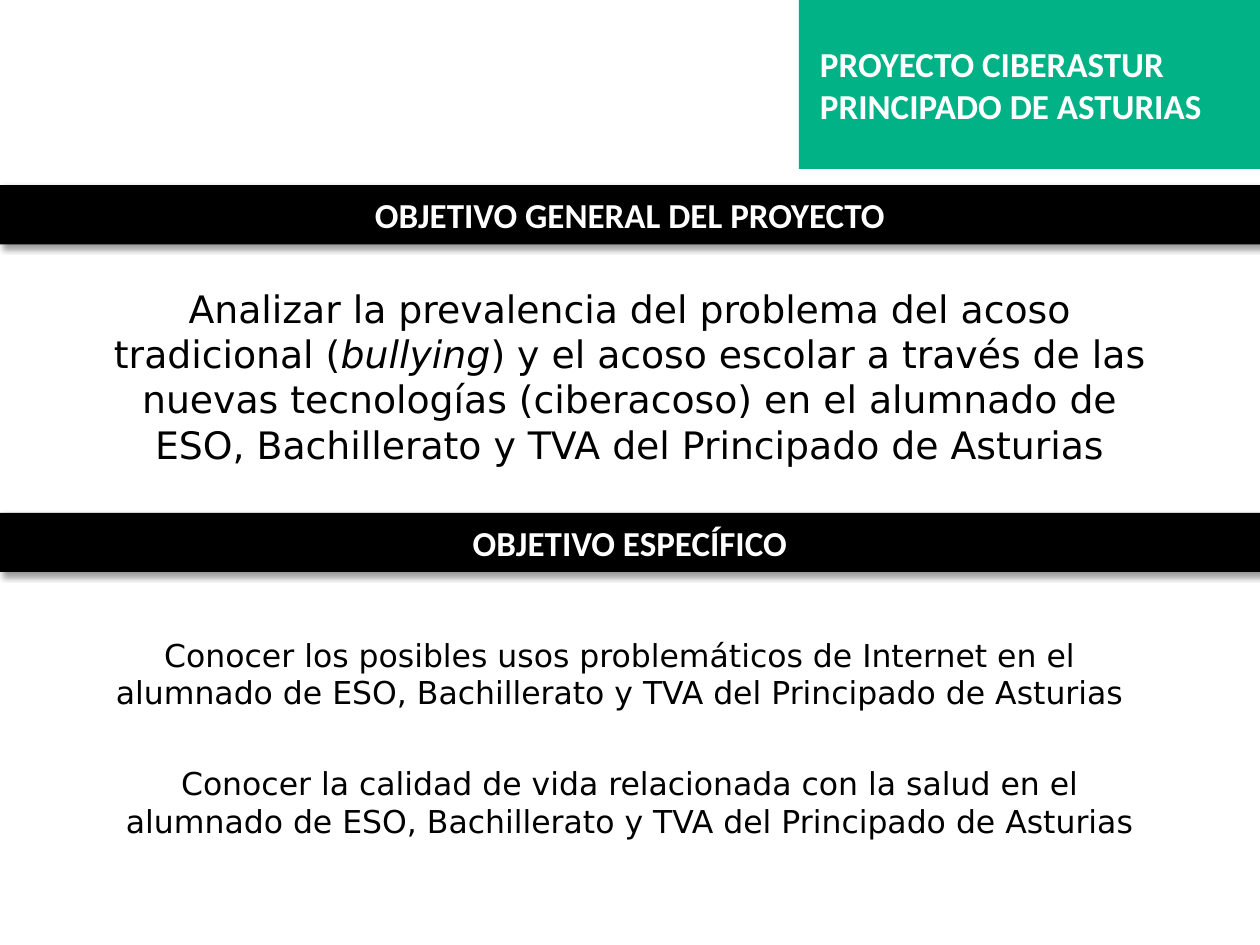
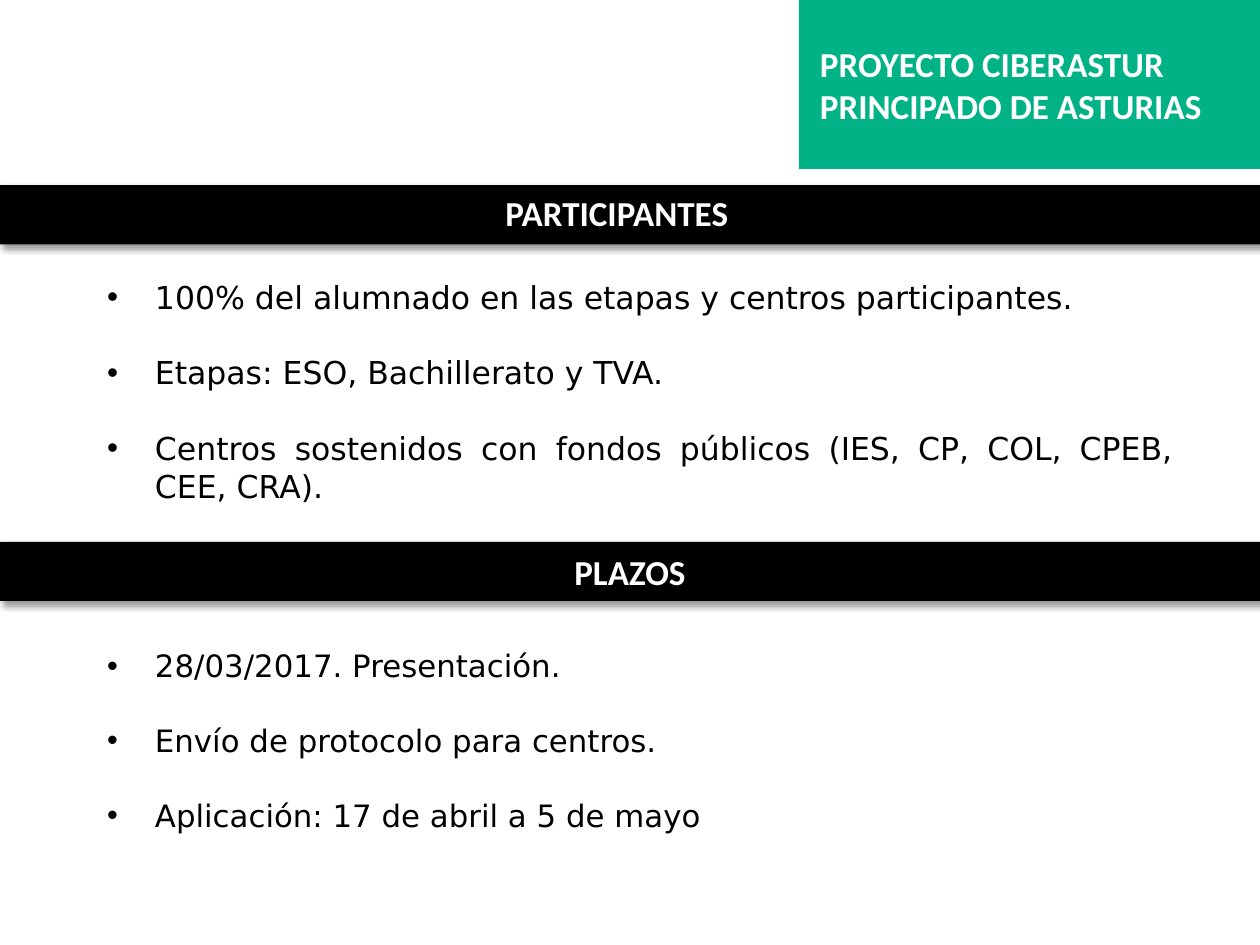
import dataclasses

import pptx
import pptx.dml.color
import pptx.enum.shapes
import pptx.enum.text
import pptx.oxml
import pptx.oxml.ns
import pptx.util

Inches, Pt = pptx.util.Inches, pptx.util.Pt
ALIGN = pptx.enum.text.PP_ALIGN
ANCHOR = pptx.enum.text.MSO_ANCHOR


@dataclasses.dataclass(frozen=True)
class Theme:
    green: str = "00B285"
    black: str = "000000"
    white: str = "FFFFFF"
    heading_font: str = "Calibri"
    body_font: str = "DejaVu Sans"
    heading_size: float = 20
    goal_size: float = 21.6
    body_size: float = 18
    dates_size: float = 17.6
    list_gap: float = 21.5
    list_indent: float = 0.38


THEME = Theme()
HEADING = {"name": THEME.heading_font, "size": Pt(THEME.heading_size), "bold": True}
BODY = {"name": THEME.body_font, "size": Pt(THEME.body_size), "bold": False}
GOAL = BODY | {"size": Pt(THEME.goal_size)}
DATES = BODY | {"size": Pt(THEME.dates_size)}

SHADOW = (
    '<a:outerShdw %s blurRad="50800" dist="38100" dir="2700000" algn="tl" rotWithShape="0">'
    '<a:srgbClr val="%s"><a:alpha val="40000"/></a:srgbClr></a:outerShdw>'
)


def rgb(value):
    return pptx.dml.color.RGBColor.from_string(value)


def place(shape, left, top, width, height):
    box = {"left": left, "top": top, "width": width, "height": height}
    for name, value in box.items():
        setattr(shape, name, Inches(value))


def add_bullet(paragraph):
    """Give the paragraph a hanging bullet."""
    properties = paragraph._p.get_or_add_pPr()
    indent = Inches(THEME.list_indent)
    properties.set("marL", str(indent))
    properties.set("indent", str(-indent))
    bullet = pptx.oxml.parse_xml('<a:buChar %s char="•"/>' % pptx.oxml.ns.nsdecls("a"))
    properties.append(bullet)


def write(shape, lines, font, color, align=ALIGN.CENTER, anchor=ANCHOR.MIDDLE,
          wrap=True, bullets=False):
    """Fill a shape with paragraphs; words between asterisks are italic."""
    frame = shape.text_frame
    layout = {"auto_size": pptx.enum.text.MSO_AUTO_SIZE.NONE,
              "word_wrap": wrap, "vertical_anchor": anchor}
    for name, value in layout.items():
        setattr(frame, name, value)
    for index, line in enumerate(lines):
        paragraph = frame.paragraphs[0] if index == 0 else frame.add_paragraph()
        paragraph.alignment = align
        paragraph.space_before = Pt(THEME.list_gap if bullets and index else 0)
        if bullets:
            add_bullet(paragraph)
        for part, words in enumerate(line.split("*")):
            run = paragraph.add_run()
            run.text = words
            for name, value in (font | {"italic": part % 2 == 1}).items():
                setattr(run.font, name, value)
            run.font.color.rgb = rgb(color)


def add_block(slide, box, color):
    block = slide.shapes.add_shape(
        pptx.enum.shapes.MSO_SHAPE.RECTANGLE, *map(Inches, box))
    block.shadow.inherit = False
    block.fill.solid()
    block.fill.fore_color.rgb = rgb(color)
    block.line.fill.background()
    return block


def add_band(slide, top, heading=None):
    """Full-width black band with a soft shadow and an optional heading."""
    band = add_block(slide, (0, top, 10, 0.47), THEME.black)
    effects = band.element.spPr.find(pptx.oxml.ns.qn("a:effectLst"))
    effects.append(pptx.oxml.parse_xml(
        SHADOW % (pptx.oxml.ns.nsdecls("a"), THEME.black)))
    if heading:
        write(band, [heading], HEADING, THEME.white)


def add_text(slide, box, *content, **options):
    write(slide.shapes.add_textbox(*map(Inches, box)), *content, **options)


def add_project_name(slide):
    add_text(slide, (6.41, 0.29, 3.46, 0.77),
             ["PROYECTO CIBERASTUR", "PRINCIPADO DE ASTURIAS"],
             HEADING, THEME.white, align=ALIGN.LEFT, anchor=ANCHOR.TOP)


def add_master_panel(deck, slide):
    """Draw the green corner panel and hand it over to the slide master."""
    panel = add_block(slide, (6.34, 0, 3.66, 1.34), THEME.green)
    panel.element.nvSpPr.cNvPr.set("id", "20")
    deck.slide_master.shapes.element.append(panel.element)


def build_objectives(slide):
    # General objective
    goal, first_aim = slide.placeholders
    place(goal, 0.75, 2.18, 8.5, 1.61)
    write(goal, ["Analizar la prevalencia del problema del acoso tradicional "
                 "(*bullying*) y el acoso escolar a través de las nuevas tecnologías "
                 "(ciberacoso) en el alumnado de ESO, Bachillerato y TVA del "
                 "Principado de Asturias"], GOAL, THEME.black)

    # Specific objectives
    students = "en el alumnado de ESO, Bachillerato y TVA del Principado de Asturias"
    place(first_aim, 0.67, 4.54, 8.5, 1.61)
    write(first_aim, [f"Conocer los posibles usos problemáticos de Internet {students}"],
          BODY, THEME.black)
    add_text(slide, (0.75, 5.56, 8.5, 1.61),
             [f"Conocer la calidad de vida relacionada con la salud {students}"],
             BODY, THEME.black)

    # Header and bands
    add_project_name(slide)
    add_band(slide, 1.47, "OBJETIVO GENERAL DEL PROYECTO")
    add_band(slide, 4.07, "OBJETIVO ESPECÍFICO")


def build_participants(slide):
    heading, participants, dates = slide.placeholders

    # Header and bands
    add_project_name(slide)
    add_band(slide, 1.47)
    add_band(slide, 4.3, "PLAZOS")

    # Heading, brought in front of its band
    place(heading, 3.9, 1.47, 1.99, 0.44)
    write(heading, ["PARTICIPANTES"], HEADING, THEME.white,
          anchor=ANCHOR.TOP, wrap=False)
    slide.shapes.element.append(heading.element)

    # Lists
    place(participants, 0.75, 2.16, 8.66, 1.89)
    write(participants, [
        "100% del alumnado en las etapas y centros participantes.",
        "Etapas: ESO, Bachillerato y TVA.",
        "Centros sostenidos con fondos públicos (IES, CP, COL, CPEB, CEE, CRA).",
    ], BODY, THEME.black, align=ALIGN.JUSTIFY, bullets=True)
    place(dates, 0.75, 5.01, 8.5, 1.73)
    write(dates, [
        "28/03/2017. Presentación.",
        "Envío de protocolo para centros.",
        "Aplicación: 17 de abril a 5 de mayo",
    ], DATES, THEME.black, align=ALIGN.JUSTIFY, bullets=True)


def main():
    deck = pptx.Presentation()
    deck.slide_width, deck.slide_height = Inches(10), Inches(7.5)
    title_layout, two_lists_layout = deck.slide_layouts[0], deck.slide_layouts[3]

    objectives = deck.slides.add_slide(title_layout)
    add_master_panel(deck, objectives)
    build_objectives(objectives)
    build_participants(deck.slides.add_slide(two_lists_layout))
    deck.save("out.pptx")


if __name__ == "__main__":
    main()
